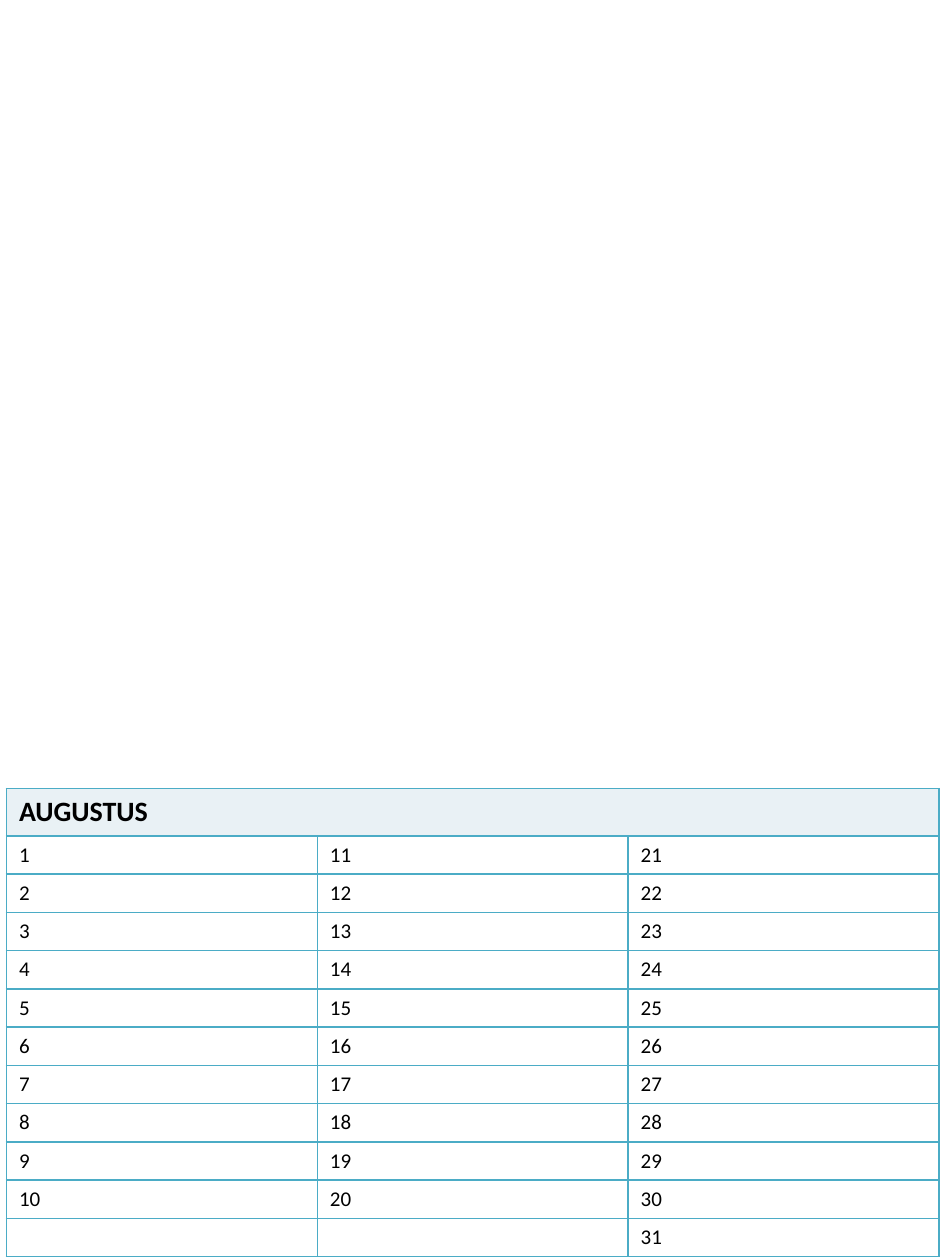
import lxml.etree
import pptx
import pptx.dml.color
import pptx.enum.text
import pptx.oxml.ns
import pptx.util

Cm = pptx.util.Cm
Pt = pptx.util.Pt
RGBColor = pptx.dml.color.RGBColor

TEAL = RGBColor(0x4B, 0xAC, 0xC6)
PALE_BLUE = RGBColor(0xE9, 0xF1, 0xF5)
WHITE = RGBColor(0xFF, 0xFF, 0xFF)
BLACK = RGBColor(0x00, 0x00, 0x00)

FONT = "Calibri"
MONTH = "AUGUSTUS"
DAYS = 31
COLUMNS = 3
DAYS_PER_COLUMN = 10
HEADER_HEIGHT = Cm(0.95)


def add_element(parent, tag, **attributes):
    return lxml.etree.SubElement(parent, pptx.oxml.ns.qn(tag), attributes)


def set_borders(cell, color, width):
    properties = cell._tc.get_or_add_tcPr()
    for side in ("a:lnL", "a:lnR", "a:lnT", "a:lnB"):
        line = add_element(properties, side, w=str(width))
        fill = add_element(line, "a:solidFill")
        add_element(fill, "a:srgbClr", val=str(color))


def write_text(cell, text, size=12, bold=False, color=BLACK):
    para = cell.text_frame.paragraphs[0]
    if not text:
        add_element(para._p, "a:endParaRPr", sz=str(size * 100))
        return
    span = para.add_run()
    span.text = text
    span.font.name = FONT
    span.font.size = Pt(size)
    span.font.bold = bold
    span.font.color.rgb = color


def day_label(row, column):
    last_column = column == COLUMNS - 1
    if row > DAYS_PER_COLUMN and not last_column:
        return ""
    return str(column * DAYS_PER_COLUMN + row)


def add_month(page, left, top, width, height):
    day_rows = DAYS - DAYS_PER_COLUMN * (COLUMNS - 1)
    frame = page.shapes.add_table(day_rows + 1, COLUMNS, left, top, width, height)
    table = frame.table
    table.first_row = False
    table.horz_banding = False

    for column in table.columns:
        column.width = width // COLUMNS
    for row in table.rows:
        row.height = (height - HEADER_HEIGHT) // day_rows
    table.rows[0].height = HEADER_HEIGHT

    for cell in table.iter_cells():
        set_borders(cell, TEAL, Pt(1))
        cell.fill.solid()
        cell.fill.fore_color.rgb = WHITE

    header = table.cell(0, 0)
    header.merge(table.cell(0, COLUMNS - 1))
    header.fill.fore_color.rgb = PALE_BLUE
    write_text(header, MONTH, size=16, bold=True)

    for row in range(1, day_rows + 1):
        for column in range(COLUMNS):
            write_text(table.cell(row, column), day_label(row, column))


def main():
    deck = pptx.Presentation()
    deck.slide_width = Cm(19.05)
    deck.slide_height = Cm(25.4)
    page = deck.slides.add_slide(deck.slide_layouts[6])
    add_month(page, Cm(0.13), Cm(15.9), Cm(18.8), Cm(9.42))
    deck.save("out.pptx")


if __name__ == "__main__":
    main()
